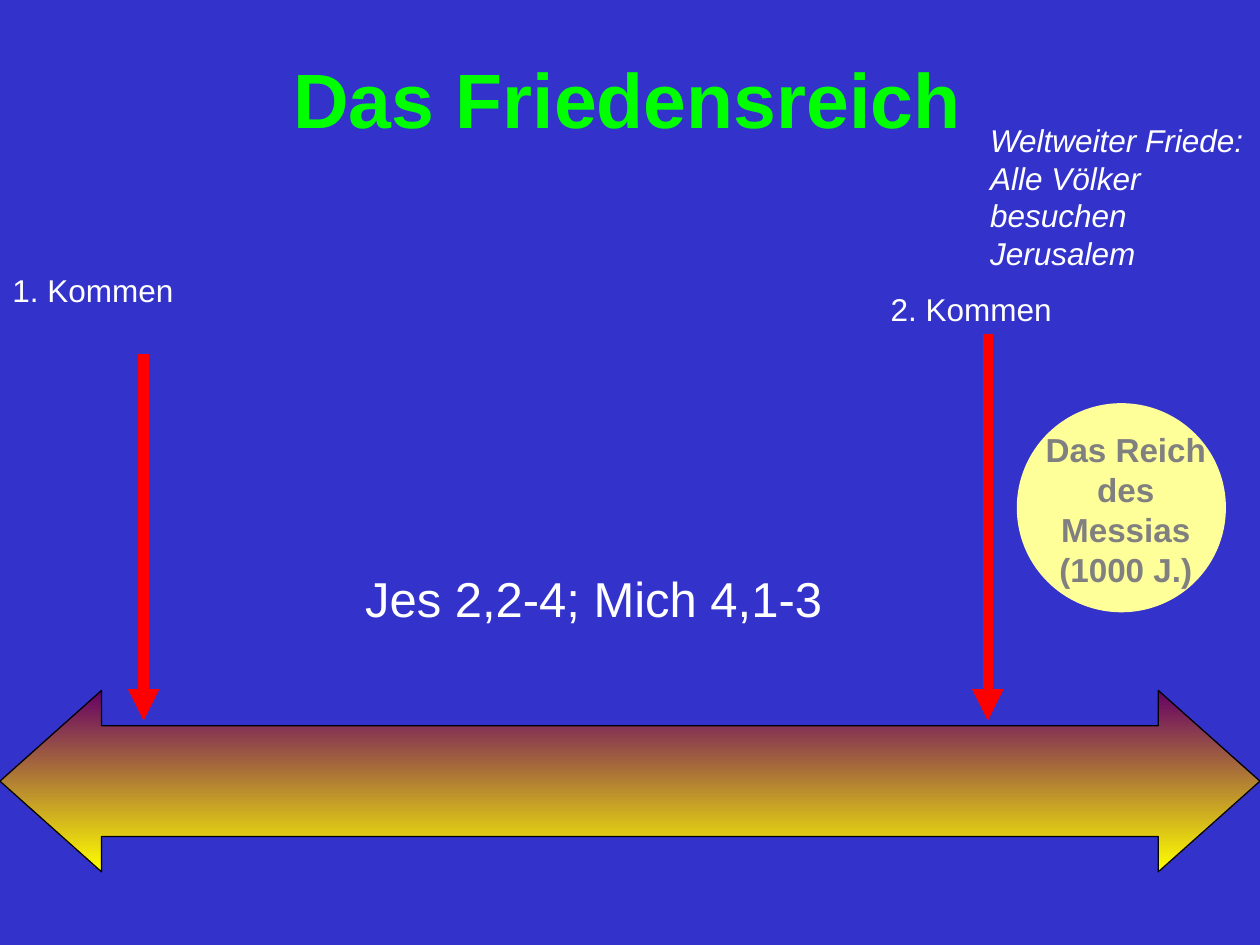
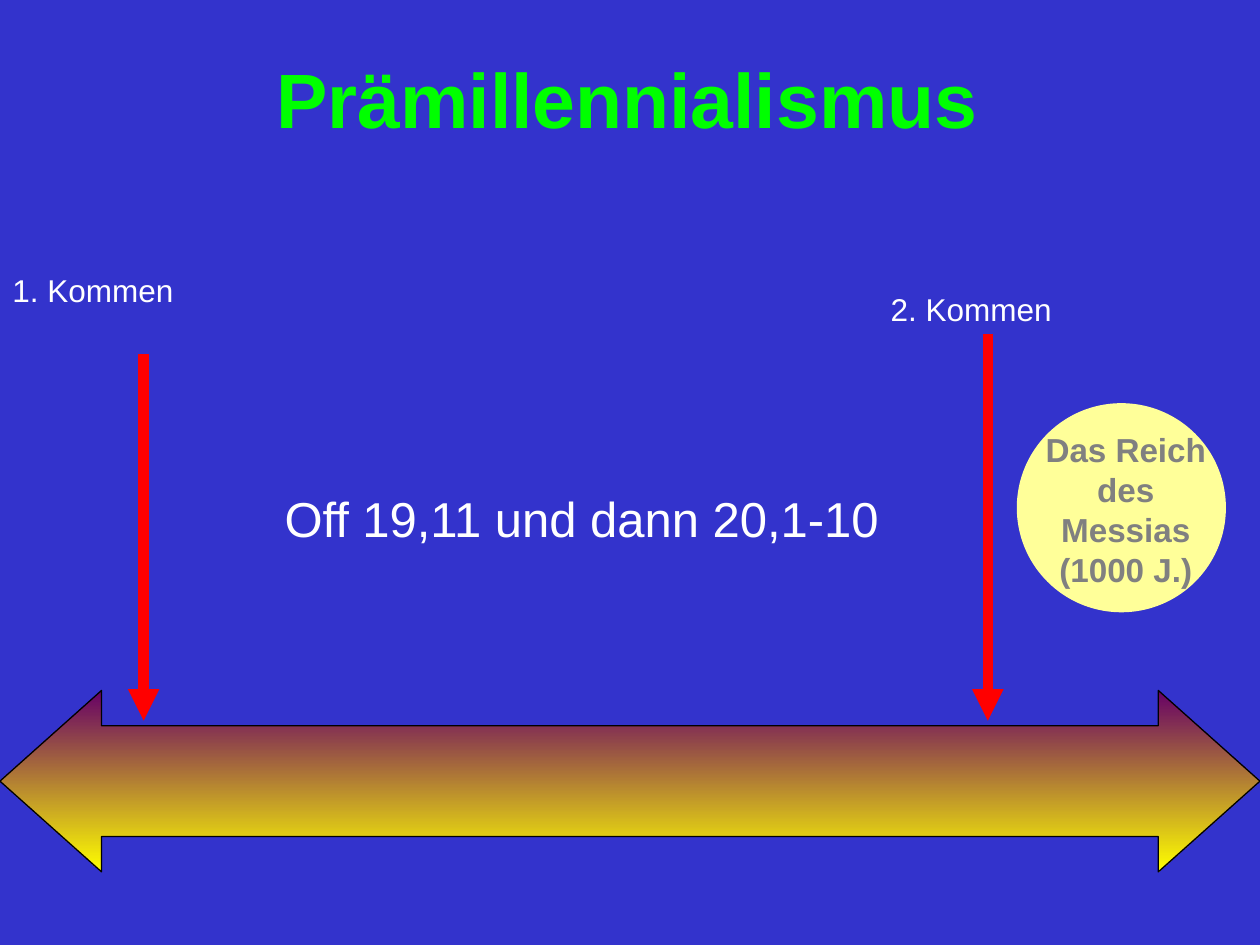
from dataclasses import dataclass
from lxml.etree import SubElement
from pptx import Presentation
from pptx.dml.color import RGBColor
from pptx.enum.shapes import MSO_CONNECTOR, MSO_SHAPE
from pptx.enum.text import MSO_AUTO_SIZE, PP_ALIGN
from pptx.oxml.ns import qn
from pptx.util import Inches, Pt


@dataclass(frozen=True)
class Theme:
    font: str = "Arial"
    background: RGBColor = RGBColor(0x33, 0x33, 0xCC)
    title: RGBColor = RGBColor(0x00, 0xFF, 0x00)
    text: RGBColor = RGBColor(0xFF, 0xFF, 0xFF)
    coming: RGBColor = RGBColor(0xFF, 0x00, 0x00)
    kingdom: RGBColor = RGBColor(0xFF, 0xFF, 0x99)
    kingdom_text: RGBColor = RGBColor(0x80, 0x80, 0x80)
    past: RGBColor = RGBColor(0x66, 0x00, 0x66)
    future: RGBColor = RGBColor(0xFF, 0xFF, 0x00)
    outline: RGBColor = RGBColor(0x00, 0x00, 0x00)
    title_size: int = 44
    verse_size: int = 28
    kingdom_size: int = 19
    label_size: int = 18


class TimelineDeck:
    def __init__(self, theme):
        self.theme = theme
        self.presentation = Presentation()
        self.presentation.slide_width = Inches(10)
        self.presentation.slide_height = Inches(7.5)
        self.slide = None

    def new_slide(self):
        blank = self.presentation.slide_layouts[6]
        self.slide = self.presentation.slides.add_slide(blank)
        fill = self.slide.background.fill
        fill.solid()
        fill.fore_color.rgb = self.theme.background

    def text(self, words, box, size, color=None, bold=False, italic=False, wrap=True):
        frame = self.slide.shapes.add_textbox(*map(Inches, box)).text_frame
        frame.word_wrap = wrap
        frame.auto_size = MSO_AUTO_SIZE.SHAPE_TO_FIT_TEXT
        paragraph = frame.paragraphs[0]
        paragraph.text = words
        font = paragraph.font
        font.name = self.theme.font
        font.size = Pt(size)
        font.bold = bold
        font.italic = italic
        font.color.rgb = color or self.theme.text
        return paragraph

    def heading(self, words, box, size, color):
        paragraph = self.text(words, box, size, color, bold=True)
        paragraph.alignment = PP_ALIGN.CENTER
        spacing = SubElement(paragraph._p.get_or_add_pPr(), qn("a:spcBef"))
        SubElement(spacing, qn("a:spcPct"), val="50000")
        paragraph._p.pPr.insert(0, spacing)

    def time_axis(self):
        axis = self.slide.shapes.add_shape(
            MSO_SHAPE.LEFT_RIGHT_ARROW, 0, Inches(5.48), Inches(10), Inches(1.44))
        axis.shadow.inherit = False
        axis.adjustments[0] = 0.61
        axis.adjustments[1] = 0.56
        axis.fill.gradient()
        axis.fill.gradient_angle = 270
        for stop, color in zip(axis.fill.gradient_stops, (self.theme.past, self.theme.future)):
            stop.color.rgb = color
        for stop, position in zip(axis.fill.gradient_stops, (0, 1)):
            stop.position = position
        axis.line.color.rgb = self.theme.outline
        axis.line.width = Pt(0.75)

    def kingdom(self):
        circle = self.slide.shapes.add_shape(
            MSO_SHAPE.OVAL, Inches(8.07), Inches(3.2), Inches(1.66), Inches(1.66))
        circle.shadow.inherit = False
        circle.fill.solid()
        circle.fill.fore_color.rgb = self.theme.kingdom
        circle.line.fill.background()
        self.heading("Das Reich des Messias (1000 J.)", (8.15, 3.36, 1.57, 1.36),
                     self.theme.kingdom_size, self.theme.kingdom_text)

    def coming_arrow(self, x, top):
        arrow = self.slide.shapes.add_connector(
            MSO_CONNECTOR.STRAIGHT, Inches(x), Inches(top), Inches(x), Inches(5.72))
        arrow.line.color.rgb = self.theme.coming
        arrow.line.width = Pt(6)
        SubElement(arrow.line._get_or_add_ln(), qn("a:tailEnd"), type="triangle")
        SubElement(arrow._element.spPr, qn("a:effectLst"))

    def timeline(self, title):
        self.new_slide()
        self.time_axis()
        self.heading(title, (1.77, 0.36, 6.42, 0.84), self.theme.title_size, self.theme.title)
        self.kingdom()
        self.coming_arrow(7.84, 2.65)
        self.coming_arrow(1.14, 2.81)
        self.text("1. Kommen", (0, 2.1, 2.05, 0.4), self.theme.label_size)
        self.text("2. Kommen", (6.97, 2.25, 2.43, 0.4), self.theme.label_size)

    def verse(self, words, box):
        self.text(words, box, self.theme.verse_size, wrap=False)


def main():
    deck = TimelineDeck(Theme())

    deck.timeline("Das Friedensreich")
    deck.text("Weltweiter Friede: Alle Völker besuchen Jerusalem",
              (7.76, 0.91, 2.24, 1.31), deck.theme.label_size, italic=True)
    deck.verse("Jes 2,2-4; Mich 4,1-3", (2.8, 4.46, 3.88, 0.57))

    deck.timeline("Prämillennialismus")
    deck.verse("Off 19,11 und dann 20,1-10", (2.16, 3.83, 4.98, 0.57))

    deck.presentation.save("out.pptx")


if __name__ == "__main__":
    main()
